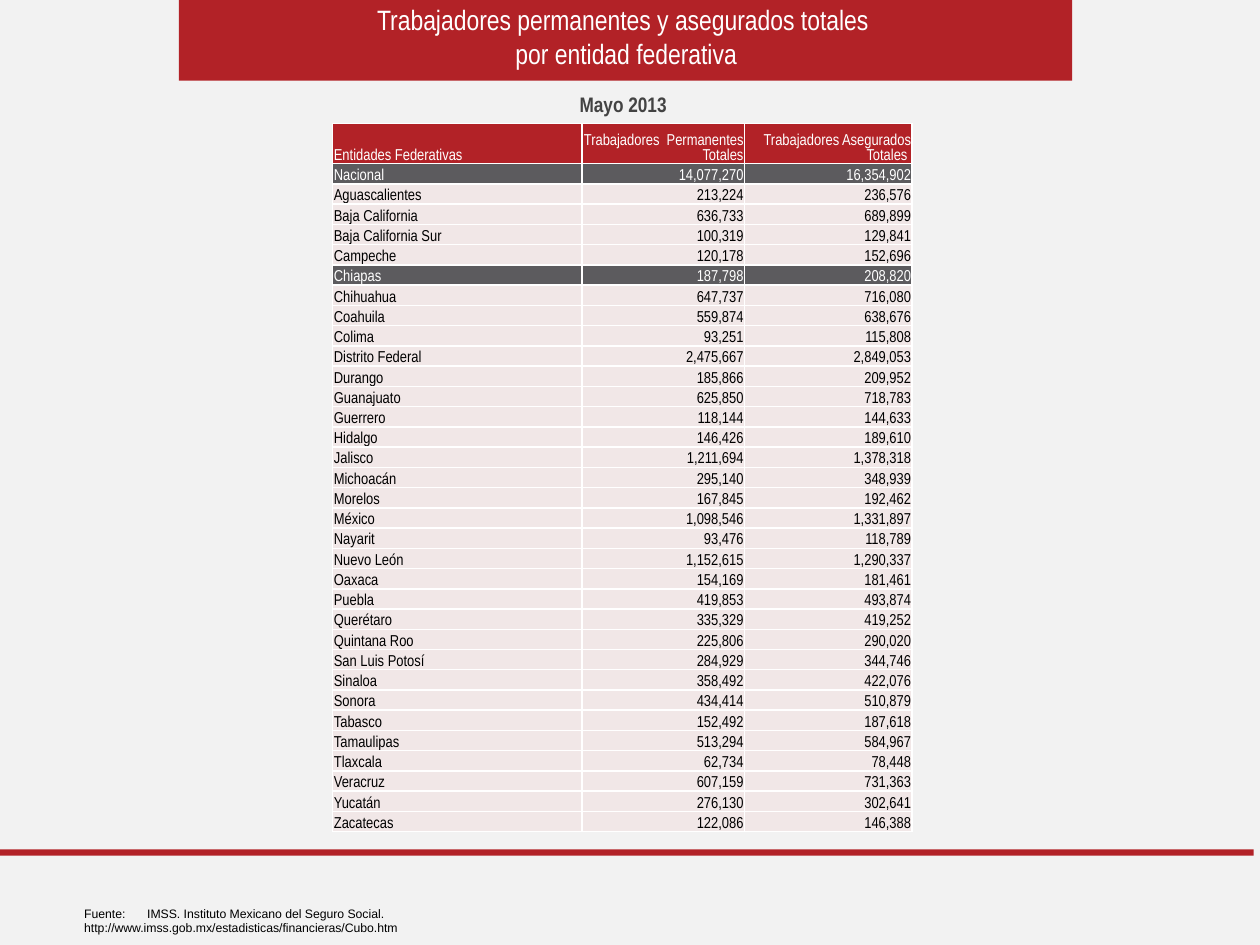
from lxml.etree import SubElement
from pptx import Presentation
from pptx.dml.color import RGBColor
from pptx.enum.shapes import MSO_SHAPE as Shape
from pptx.enum.text import MSO_ANCHOR as Anchor, MSO_AUTO_SIZE as AutoSize, PP_ALIGN as Align
from pptx.oxml.ns import qn
from pptx.util import Inches, Pt

RED, GRAY, PINK = "B22227", "5C5B5E", "F1E7E7"
WHITE, BLACK = "FFFFFF", "000000"
NARROW = "Arial Narrow"

HEADINGS = ("Entidades Federativas", "Trabajadores  Permanentes Totales", "Trabajadores Asegurados Totales ")
HIGHLIGHTED = {"Nacional", "Chiapas"}
WORKERS = [
    ("Nacional", 14077270, 16354902),
    ("Aguascalientes", 213224, 236576),
    ("Baja California", 636733, 689899),
    ("Baja California Sur", 100319, 129841),
    ("Campeche", 120178, 152696),
    ("Chiapas", 187798, 208820),
    ("Chihuahua", 647737, 716080),
    ("Coahuila", 559874, 638676),
    ("Colima", 93251, 115808),
    ("Distrito Federal", 2475667, 2849053),
    ("Durango", 185866, 209952),
    ("Guanajuato", 625850, 718783),
    ("Guerrero", 118144, 144633),
    ("Hidalgo", 146426, 189610),
    ("Jalisco", 1211694, 1378318),
    ("Michoacán", 295140, 348939),
    ("Morelos", 167845, 192462),
    ("México", 1098546, 1331897),
    ("Nayarit", 93476, 118789),
    ("Nuevo León", 1152615, 1290337),
    ("Oaxaca", 154169, 181461),
    ("Puebla", 419853, 493874),
    ("Querétaro", 335329, 419252),
    ("Quintana Roo", 225806, 290020),
    ("San Luis Potosí", 284929, 344746),
    ("Sinaloa", 358492, 422076),
    ("Sonora", 434414, 510879),
    ("Tabasco", 152492, 187618),
    ("Tamaulipas", 513294, 584967),
    ("Tlaxcala", 62734, 78448),
    ("Veracruz", 607159, 731363),
    ("Yucatán", 276130, 302641),
    ("Zacatecas", 122086, 146388),
]


def rgb(color):
    return RGBColor.from_string(color)


def apply(target, **values):
    for name, value in values.items():
        setattr(target, name, value)


def write(frame, text, color, align=Align.LEFT, **font):
    frame.text = text
    for paragraph in frame.paragraphs:
        paragraph.alignment = align
        apply(paragraph.font, **font)
        paragraph.font.color.rgb = rgb(color)


def add_band(slide, left, top, width, height):
    band = slide.shapes.add_shape(Shape.RECTANGLE, left, top, width, height)
    band.shadow.inherit = False
    band.fill.solid()
    band.fill.fore_color.rgb = rgb(RED)
    band.line.fill.background()


def add_header(slide, left, top, width, height):
    add_band(slide, left, top, width, height)
    title = slide.shapes.title
    slide.shapes._spTree.append(title._element)
    apply(title, left=left, top=top - Inches(0.03), width=width - Inches(0.04), height=height)
    apply(title.text_frame, word_wrap=True, auto_size=AutoSize.NONE, vertical_anchor=Anchor.MIDDLE)
    write(title.text_frame, "Trabajadores permanentes y asegurados totales\n por entidad federativa",
          WHITE, Align.CENTER, name=NARROW, size=Pt(16))


def add_period(slide, left, top, width, height):
    period = slide.shapes.add_textbox(left, top, width, height)
    period.text_frame.word_wrap = True
    write(period.text_frame, "Mayo 2013", "434343", Align.CENTER, name=NARROW, size=Pt(12), bold=True)


def add_borders(cell):
    properties = cell._tc.get_or_add_tcPr()
    for side in ("lnL", "lnR", "lnT", "lnB"):
        edge = SubElement(properties, qn(f"a:{side}"), w=str(Pt(1)))
        SubElement(SubElement(edge, qn("a:solidFill")), qn("a:srgbClr"), val=WHITE)


def fill_row(row, values, fill, color):
    inset = Inches(0.01)
    for column, (cell, value) in enumerate(zip(row.cells, values)):
        apply(cell, vertical_anchor=Anchor.BOTTOM, margin_left=inset, margin_right=inset,
              margin_top=inset, margin_bottom=0)
        add_borders(cell)
        cell.fill.solid()
        cell.fill.fore_color.rgb = rgb(fill)
        text = value if isinstance(value, str) else f"{value:,}"
        write(cell.text_frame, text, color, Align.RIGHT if column else Align.LEFT, name=NARROW, size=Pt(9))


def add_workers(slide, left, top, width, height):
    frame = slide.shapes.add_table(len(WORKERS) + 1, len(HEADINGS), left, top, width, height)
    workers = frame.table
    apply(workers, first_row=False, horz_banding=False)
    for column, column_width in zip(workers.columns, (1.98, 1.29, 1.33)):
        column.width = Inches(column_width)
    heading, *states = workers.rows
    heading.height = Inches(0.32)
    fill_row(heading, HEADINGS, RED, WHITE)
    for row, values in zip(states, WORKERS):
        row.height = Inches(0.12)
        fill_row(row, values, *((GRAY, WHITE) if values[0] in HIGHLIGHTED else (PINK, BLACK)))
    frame.height = height


def add_source(slide, left, top, width, height):
    source = slide.shapes.add_textbox(left, top, width, height)
    source.text_frame.word_wrap = True
    paragraph = source.text_frame.paragraphs[0]
    tabs = SubElement(paragraph._p.get_or_add_pPr(), qn("a:tabLst"))
    SubElement(tabs, qn("a:tab"), pos=str(Inches(1)), algn="l")
    write(source.text_frame,
          "Fuente:\tIMSS. Instituto Mexicano del Seguro Social. "
          "http://www.imss.gob.mx/estadisticas/financieras/Cubo.htm",
          BLACK, name="Arial", size=Pt(7))


def main():
    deck = Presentation()
    apply(deck, slide_width=Inches(10), slide_height=Inches(7.5))
    slide = deck.slides.add_slide(deck.slide_layouts[5])
    slide.background.fill.solid()
    slide.background.fill.fore_color.rgb = rgb("F2F2F2")
    regions = [
        (add_header, (1.42, 0, 7.09, 0.64)),
        (add_band, (0, 6.74, 9.95, 0.05)),
        (add_period, (1.42, 0.68, 7.05, 0.3)),
        (add_source, (0.57, 7.14, 5.08, 0.22)),
        (add_workers, (2.64, 0.98, 4.6, 5.47)),
    ]
    for add_region, box in regions:
        add_region(slide, *map(Inches, box))
    deck.save("out.pptx")


if __name__ == "__main__":
    main()
